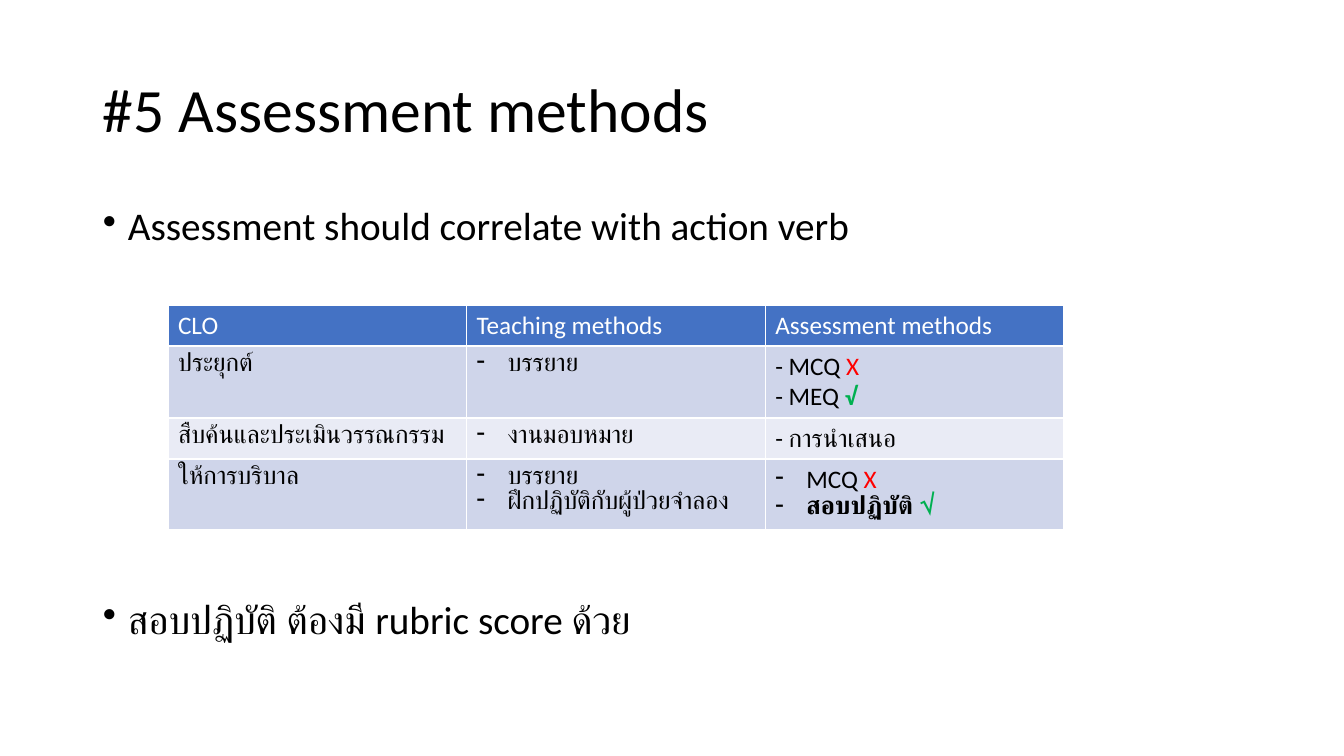
from dataclasses import dataclass
from lxml import etree
from pptx import Presentation
from pptx.dml.color import RGBColor as Rgb
from pptx.enum.text import MSO_ANCHOR as Anchor
from pptx.oxml.ns import qn
from pptx.util import Pt

PX = 914400 / 100.8


@dataclass(frozen=True)
class Theme:
    font: str = "Calibri"
    title: int = 44
    body: int = 28
    cell: int = 18
    ink: str = "000000"
    white: str = "FFFFFF"
    header: str = "4472C4"
    bands: tuple = ("CFD5EA", "E9EBF5")
    wrong: str = "FF0000"
    right: str = "00B050"


theme = Theme()


def px(length):
    return round(length * PX)


def write(para, spans, size, color, bullet=None, indent=0):
    """Fill a paragraph with (text, colour, bold) spans; a None colour means the base colour."""
    para.font.name, para.font.size = theme.font, Pt(size)
    for text, tint, bold in spans:
        span = para.add_run()
        span.text = text
        span.font.bold = bold
        span.font.color.rgb = Rgb.from_string(tint or color)
    if bullet:
        props = para._p.get_or_add_pPr()
        props.set("marL", str(px(indent)))
        props.set("indent", str(-px(indent)))
        mark = etree.Element(qn("a:buChar"), char=bullet)
        props.insert_element_before(mark, "a:tabLst", "a:defRPr", "a:extLst")


deck = Presentation()
deck.slide_width, deck.slide_height = px(1344), px(756)
page = deck.slides.add_slide(deck.slide_layouts[6])

# Title
title = page.shapes.add_textbox(px(93), px(40), px(1159), px(146)).text_frame
title.word_wrap = True
title.vertical_anchor = Anchor.MIDDLE
title.paragraphs[0].line_spacing = 0.9
write(title.paragraphs[0], [("#5 Assessment methods", None, False)], theme.title, theme.ink)

# Points above and below the table, with the space before each in points
points = [
    ("Assessment should correlate with action verb", 10),
    ("สอบปฏิบัติ ต้องมี rubric score ด้วย", 251),
]
body = page.shapes.add_textbox(px(93), px(202), px(1159), px(480)).text_frame
body.word_wrap = True
for index, (text, gap) in enumerate(points):
    para = body.add_paragraph() if index else body.paragraphs[0]
    para.line_spacing, para.space_before = 0.9, Pt(gap)
    write(para, [(text, None, False)], theme.body, theme.ink, "•", 25)

# Table: each cell is (bullet, lines), each line a list of spans
wrong = ("Χ", theme.wrong, False)
right = ("√", theme.right, True)
rows = [
    (41, [
        (None, [[("CLO", None, False)]]),
        (None, [[("Teaching methods", None, False)]]),
        (None, [[("Assessment methods", None, False)]]),
    ]),
    (72, [
        (None, [[("ประยุกต์", None, False)]]),
        ("-", [[("บรรยาย", None, False)]]),
        (None, [[("- MCQ ", None, False), wrong], [("- MEQ ", None, False), right]]),
    ]),
    (41, [
        (None, [[("สืบค้นและประเมินวรรณกรรม", None, False)]]),
        ("-", [[("งานมอบหมาย", None, False)]]),
        (None, [[("- การนำเสนอ", None, False)]]),
    ]),
    (66, [
        (None, [[("ให้การบริบาล", None, False)]]),
        ("-", [[("บรรยาย", None, False)], [("ฝึกปฏิบัติกับผู้ป่วยจำลอง", None, False)]]),
        ("-", [[("MCQ ", None, False), wrong], [("สอบปฏิบัติ ", None, True), right]]),
    ]),
]
table_height = sum(height for height, _ in rows)
table = page.shapes.add_table(len(rows), 3, px(168), px(305), px(896), px(table_height)).table
for row_index, (height, cells) in enumerate(rows):
    table.rows[row_index].height = px(height)
    fill = theme.bands[(row_index - 1) % 2] if row_index else theme.header
    color = theme.ink if row_index else theme.white
    for column_index, (bullet, lines) in enumerate(cells):
        cell = table.cell(row_index, column_index)
        cell_props = cell._tc.get_or_add_tcPr()
        for side in ("a:lnL", "a:lnR", "a:lnT", "a:lnB"):
            border = etree.SubElement(cell_props, qn(side), w=str(Pt(1)))
            paint = etree.SubElement(border, qn("a:solidFill"))
            etree.SubElement(paint, qn("a:srgbClr"), val=theme.white)
        cell.fill.solid()
        cell.fill.fore_color.rgb = Rgb.from_string(fill)
        frame = cell.text_frame
        for line_index, spans in enumerate(lines):
            para = frame.add_paragraph() if line_index else frame.paragraphs[0]
            write(para, spans, theme.cell, color, bullet, 31)

deck.save("out.pptx")
